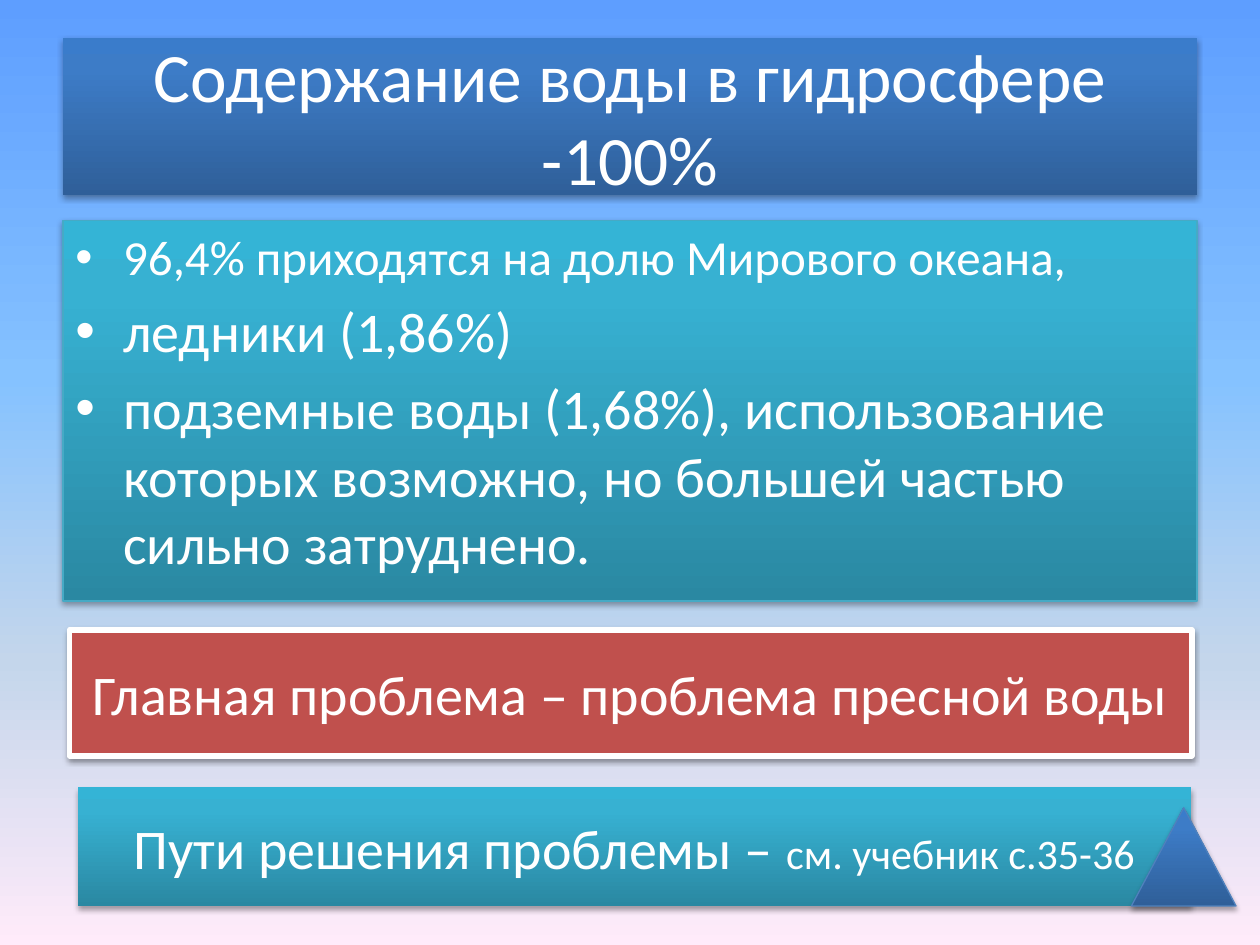
import copy

import pptx
import pptx.dml.color
import pptx.enum.shapes
import pptx.enum.text
import pptx.oxml
import pptx.oxml.ns
import pptx.util
from lxml import etree

Inches, Pt = pptx.util.Inches, pptx.util.Pt
RGBColor = pptx.dml.color.RGBColor
SHAPE = pptx.enum.shapes.MSO_SHAPE
ANCHOR = pptx.enum.text.MSO_ANCHOR
ALIGN = pptx.enum.text.PP_ALIGN
qn = pptx.oxml.ns.qn

WHITE = RGBColor(0xFF, 0xFF, 0xFF)
RED = RGBColor(0xC0, 0x50, 0x4D)
BLUE_LINE = RGBColor(0x4F, 0x81, 0xBD)
TEAL_LINE = RGBColor(0x46, 0xAA, 0xC5)
SKY = [(0, RGBColor(0x5E, 0x9E, 0xFF)), (0.4, RGBColor(0x85, 0xC2, 0xFF)),
       (0.7, RGBColor(0xC4, 0xD6, 0xEB)), (1, RGBColor(0xFF, 0xEB, 0xFA))]
BLUE = [(0, RGBColor(0x2F, 0x5F, 0x99)), (0.8, RGBColor(0x3D, 0x7C, 0xC7)),
        (1, RGBColor(0x3A, 0x7C, 0xCB))]
TEAL = [(0, RGBColor(0x2A, 0x88, 0xA2)), (0.8, RGBColor(0x37, 0xB1, 0xD2)),
        (1, RGBColor(0x34, 0xB4, 0xD6))]
FONT = "Calibri"


def set_gradient(fill, owner, stops, angle):
    """Fill with any number of stops; angle runs counter-clockwise."""
    fill.gradient()
    fill.gradient_angle = angle
    stop_list = next(owner.iter(qn("a:gsLst")))
    while len(stop_list) < len(stops):
        stop_list.append(copy.deepcopy(stop_list[-1]))
    for stop, (position, color) in zip(fill.gradient_stops, stops):
        stop.position = position
        stop.color.rgb = color


def add_shadow(shape, opacity, distance):
    shape.shadow.inherit = False
    effects = next(shape.element.iter(qn("a:effectLst")))
    shadow = etree.SubElement(effects, qn("a:outerShdw"), blurRad=str(Pt(3.1)),
                              dist=str(Pt(distance)), dir="5400000", rotWithShape="0")
    color = etree.SubElement(shadow, qn("a:srgbClr"), val="000000")
    etree.SubElement(color, qn("a:alpha"), val=str(opacity * 1000))


def add_panel(slide, box, fill, line=None, line_width=0.75, kind=SHAPE.RECTANGLE,
              opacity=35, distance=1.8):
    """Shadowed shape; fill is a colour or a list of gradient stops."""
    panel = slide.shapes.add_shape(kind, *map(Inches, box))
    if isinstance(fill, list):
        set_gradient(panel.fill, panel.element, fill, 90)
    else:
        panel.fill.solid()
        panel.fill.fore_color.rgb = fill
    if line is None:
        panel.line.fill.background()
    else:
        panel.line.color.rgb = line
        panel.line.width = Pt(line_width)
    add_shadow(panel, opacity, distance)
    return panel


def format_run(run, size):
    run.font.name = FONT
    run.font.size = Pt(size)
    run.font.color.rgb = WHITE


def write_centred(panel, *pieces):
    """Write (text, size) pieces on one centred paragraph."""
    panel.text_frame.word_wrap = True
    panel.text_frame.vertical_anchor = ANCHOR.MIDDLE
    paragraph = panel.text_frame.paragraphs[0]
    paragraph.alignment = ALIGN.CENTER
    for text, size in pieces:
        run = paragraph.add_run()
        run.text = text
        format_run(run, size)


def add_title(slide, box):
    write_centred(add_panel(slide, box, BLUE),
                  ("Содержание воды в гидросфере -100%", 39.6))


def add_water_shares(slide, box):
    shares = [("96,4% приходятся на долю Мирового океана,", 28),
              ("ледники (1,86%)", 32),
              ("подземные воды (1,68%), использование которых возможно, "
               "но большей частью сильно затруднено.", 32)]
    frame = add_panel(slide, box, TEAL, TEAL_LINE).text_frame
    frame.word_wrap = True
    frame.vertical_anchor = ANCHOR.TOP
    frame.text = "\n".join(text for text, _ in shares)
    for paragraph, (_, size) in zip(frame.paragraphs, shares):
        paragraph.alignment = ALIGN.LEFT
        paragraph.space_before = Pt(6)
        format_run(paragraph.runs[0], size)
        properties = paragraph._p.get_or_add_pPr()
        properties.set("marL", str(Inches(0.38)))
        properties.set("indent", str(Inches(-0.38)))
        etree.SubElement(properties, qn("a:buFont"), typeface="Arial")
        etree.SubElement(properties, qn("a:buChar"), char="•")


def add_main_problem(slide, box):
    write_centred(add_panel(slide, box, RED, WHITE, 3, opacity=38, distance=1.6),
                  ("Главная проблема – проблема пресной воды", 32))


def add_solutions(slide, box):
    write_centred(add_panel(slide, box, TEAL),
                  ("Пути решения проблемы – ", 32), ("см. учебник с.35-36", 24))


def main():
    deck = pptx.Presentation()
    deck.slide_width, deck.slide_height = Inches(10), Inches(7.5)
    slide = deck.slides.add_slide(deck.slide_layouts[6])
    set_gradient(slide.background.fill, slide.element, SKY, 270)
    add_title(slide, (0.5, 0.3, 9, 1.25))
    add_water_shares(slide, (0.5, 1.75, 9, 3.02))
    add_main_problem(slide, (0.55, 5, 8.91, 1))
    add_solutions(slide, (0.62, 6.25, 8.83, 0.94))
    add_panel(slide, (8.98, 6.41, 0.83, 0.78), BLUE, BLUE_LINE,
              kind=SHAPE.FLOWCHART_EXTRACT)
    deck.save("out.pptx")


if __name__ == "__main__":
    main()
